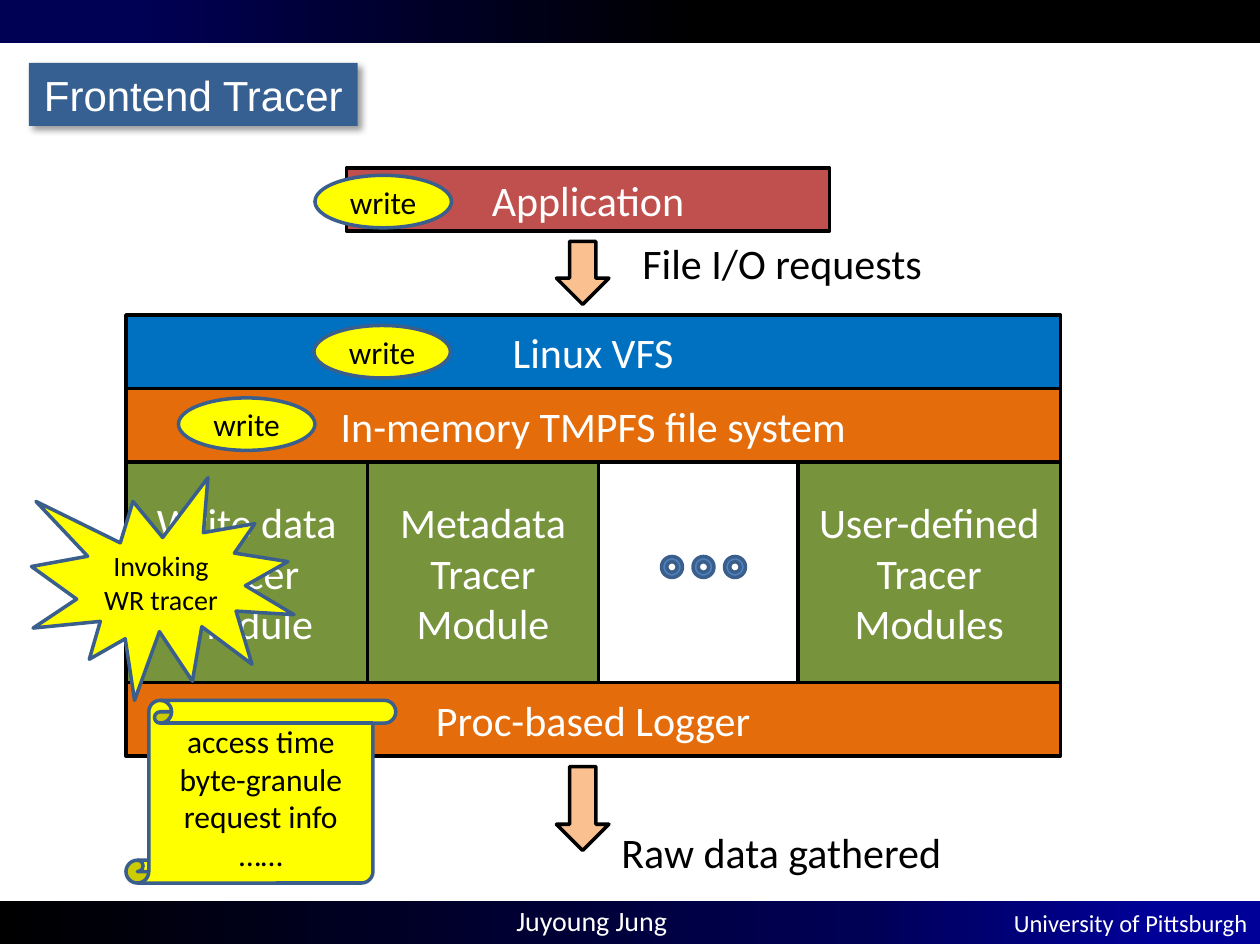
from lxml import etree
from copy import deepcopy
from pptx import Presentation
from pptx.dml.color import RGBColor
from pptx.enum.shapes import MSO_SHAPE
from pptx.enum.text import MSO_ANCHOR, PP_ALIGN
from pptx.oxml.ns import qn
from pptx.util import Inches, Pt

RECTANGLE = MSO_SHAPE.RECTANGLE
OVAL = MSO_SHAPE.OVAL
DOWN_ARROW = MSO_SHAPE.DOWN_ARROW
DONUT = MSO_SHAPE.DONUT
SCROLL = MSO_SHAPE.VERTICAL_SCROLL
BURST = MSO_SHAPE.EXPLOSION1
LEFT, CENTER, RIGHT = PP_ALIGN.LEFT, PP_ALIGN.CENTER, PP_ALIGN.RIGHT
TOP, MIDDLE = MSO_ANCHOR.TOP, MSO_ANCHOR.MIDDLE

CELL = 1 / 12
WIDTH_CELLS = 120
STACK_LEFT, STACK_WIDTH, LAYER_HEIGHT = 12, 89, 7
MODULE_TOP, MODULE_HEIGHT = 44, 21
BAR_HEIGHT = 4.08
BLACK, WHITE, YELLOW = "000000", "FFFFFF", "FFFF00"
NAVY, BLUE_EDGE = "000054", "3A5F8C"
ORANGE, GREEN, PEACH = "E46C0A", "77933C", "FAC090"


def color(value):
    return RGBColor.from_string(value)


def place(cells):
    return [Inches(cell * CELL) for cell in cells]


def write_text(shape, text, size, ink, align=CENTER, anchor=MIDDLE, font="Calibri"):
    frame = shape.text_frame
    frame.word_wrap = True
    frame.vertical_anchor = anchor
    frame.text = text
    for para in frame.paragraphs:
        para.alignment = align
        for span in para.runs:
            span.font.name = font
            span.font.size = Pt(size)
            span.font.color.rgb = color(ink)


def add_block(page, kind, cells, fill, edge=None):
    shape = page.shapes.add_shape(kind, *place(cells))
    shape.shadow.inherit = False
    shape.fill.solid()
    shape.fill.fore_color.rgb = color(fill)
    if edge:
        shape.line.color.rgb = color(edge)
        shape.line.width = Pt(2)
    else:
        shape.line.fill.background()
    return shape


def add_layer(page, cells, fill, text):
    write_text(add_block(page, RECTANGLE, cells, fill, BLACK), text, 24, WHITE)


def add_note(page, kind, cells, text, size=18):
    write_text(add_block(page, kind, cells, YELLOW, BLUE_EDGE), text, size, BLACK)


def add_label(page, cells, text, size=24, ink=BLACK):
    box = page.shapes.add_textbox(*place(cells))
    write_text(box, text, size, ink, LEFT, TOP)


def add_bar(page, top, stops):
    bar = add_block(page, RECTANGLE, (0, top, WIDTH_CELLS, BAR_HEIGHT), BLACK)
    bar.fill.gradient()
    bar.fill.gradient_angle = 0
    stop_list = bar._element.spPr.find(qn("a:gradFill")).find(qn("a:gsLst"))
    stop_list.append(deepcopy(stop_list[-1]))
    for stop, (share, value) in zip(bar.fill.gradient_stops, stops):
        stop.position = share
        stop.color.rgb = color(value)
    return bar


def add_soft_shadow(shape):
    effects = shape._element.spPr.find(qn("a:effectLst"))
    shadow = etree.SubElement(effects, qn("a:outerShdw"), blurRad=str(Pt(4)),
                              dist=str(Pt(3)), dir="2700000", algn="tl", rotWithShape="0")
    tint = etree.SubElement(shadow, qn("a:srgbClr"), val=BLACK)
    etree.SubElement(tint, qn("a:alpha"), val="40000")


def add_frame(page):
    footer = add_bar(page, 85.8, [(0, BLACK), (0.68, NAVY), (0.92, "000099")])
    write_text(footer, "University of Pittsburgh", 14, WHITE, RIGHT)
    add_label(page, (48, 85.44, 19, 4.44), "Juyoung Jung", 16, WHITE)
    add_bar(page, 0, [(0.11, NAVY), (0.55, BLACK), (0.94, BLACK)])


def add_stack(page):
    add_layer(page, (33, 16, 46, 6), "C0504D", "Application")
    layers = [(30, "0070C0", "Linux VFS"),
              (37, ORANGE, "In-memory TMPFS file system"),
              (65, ORANGE, "Proc-based Logger")]
    for top, fill, text in layers:
        add_layer(page, (STACK_LEFT, top, STACK_WIDTH, LAYER_HEIGHT), fill, text)
    modules = [(12, 23, "Write data\nTracer Module"),
               (35, 22, "Metadata\nTracer Module"),
               (76, 25, "User-defined\nTracer Modules")]
    for left, width, text in modules:
        add_layer(page, (left, MODULE_TOP, width, MODULE_HEIGHT), GREEN, text)
    for index in range(3):
        add_block(page, DONUT, (63 + 3 * index, 53, 2, 2), "4F81BD", BLUE_EDGE)


def add_flow(page):
    for top, height in [(23, 6), (73, 8)]:
        add_block(page, DOWN_ARROW, (53, top, 5, height), PEACH, BLACK)
    add_label(page, (60, 22, 31, 6), "File I/O requests")
    add_label(page, (58, 78.1, 52, 6), "Raw data gathered")


def add_notes(page):
    for left, top in [(30, 16.7), (29.9, 31), (17, 37.9)]:
        add_note(page, OVAL, (left, top, 13, 5), "write")
    add_note(page, SCROLL, (12, 66.7, 25.7, 17.4),
             "access time\nbyte-granule\nrequest info\n……")
    add_note(page, BURST, (3, 45.5, 25, 21.2), "Invoking\nWR tracer", 16)


def add_title(page):
    title = add_block(page, RECTANGLE, (2.76, 6, 31.3, 6), "376092")
    add_soft_shadow(title)
    write_text(title, "Frontend Tracer", 24, WHITE, CENTER, TOP, "Arial")


def main():
    deck = Presentation()
    deck.slide_width, deck.slide_height = Inches(10), Inches(7.5)
    page = deck.slides.add_slide(deck.slide_layouts[6])
    add_frame(page)
    add_stack(page)
    add_flow(page)
    add_notes(page)
    add_title(page)
    deck.save("out.pptx")


if __name__ == "__main__":
    main()
